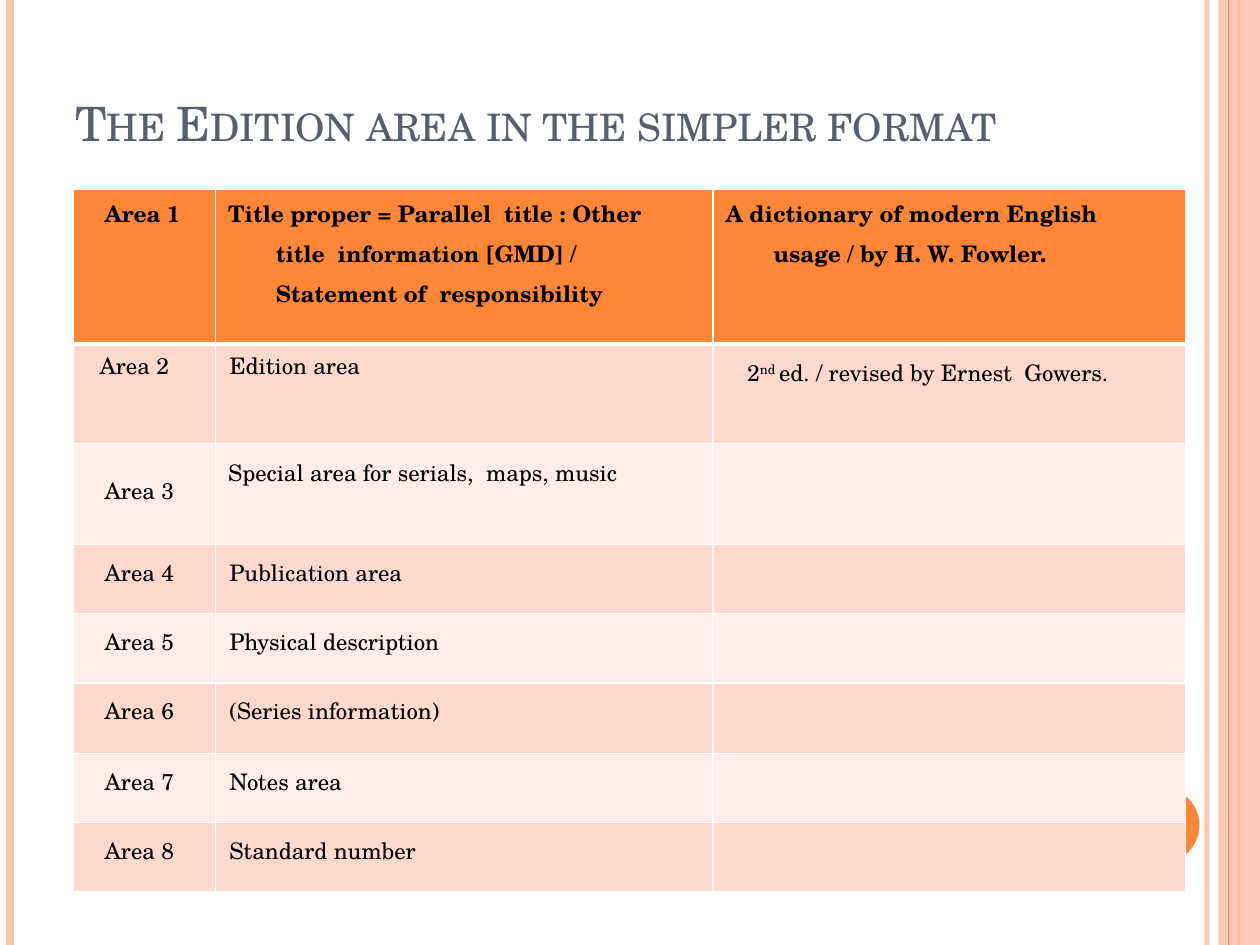
from dataclasses import dataclass

from lxml.etree import SubElement
from pptx import Presentation
from pptx.dml.color import RGBColor
from pptx.enum.shapes import MSO_CONNECTOR as Connector, MSO_SHAPE as Shape
from pptx.enum.text import MSO_ANCHOR as Anchor
from pptx.oxml.ns import qn
from pptx.util import Inches, Pt


@dataclass(frozen=True)
class Theme:
    font: str = "TeX Gyre Schola"
    title_size: float = 27
    table_size: float = 13
    title: str = "575F6D"
    text: str = "000000"
    accent: str = "FE8637"
    stripe: str = "FEC3AE"
    band_dark: str = "FFD9CE"
    band_light: str = "FFEDE8"
    border: str = "FFFFFF"


@dataclass(frozen=True)
class CellText:
    """Text with its top inset, left margin and first-line indent in inches."""
    text: str
    top: float = 0.05
    margin: float = 0.1
    indent: float = 0
    superscript: str = ""


THEME = Theme()
SLIDE_HEIGHT = 7.5
COLUMN_WIDTHS = (1.13, 3.95, 3.75)
ROW_HEIGHTS = (1.23, 0.79, 0.8, 0.55, 0.55, 0.56, 0.55, 0.55)
HANGING = {"margin": 0.47, "indent": -0.38}
AREA_MARGIN = 0.24
HEADER_RIGHT_INSET = 0.4

ROWS = [
    (CellText("Area 1", 0.01, AREA_MARGIN),
     CellText("Title proper = Parallel  title : Other title  information [GMD] /  "
              "Statement of  responsibility", 0.01, **HANGING),
     CellText("A dictionary of modern English  usage / by H. W. Fowler.", 0.01, **HANGING)),
    (CellText("Area 2", 0, 0.2),
     CellText("Edition area", 0),
     CellText("2nd ed. / revised by Ernest  Gowers.", 0.05, 0.47, -0.21, "nd ")),
    (CellText("Area 3", 0.2, AREA_MARGIN),
     CellText("Special area for serials,  maps, music", 0.06, **HANGING)),
] + [
    (CellText(f"Area {number}", margin=AREA_MARGIN), CellText(description))
    for number, description in enumerate(
        ("Publication area", "Physical description", "(Series information)",
         "Notes area", "Standard number"), start=4)
]


def color(value):
    return RGBColor.from_string(value)


def set_opacity(shape, percent):
    """Apply opacity to the fill or line colour of a shape."""
    value = next(shape._element.spPr.iter(qn("a:srgbClr")))
    SubElement(value, qn("a:alpha"), val=str(percent * 1000))


def style_font(font, size, text_color, bold=False):
    font.name = THEME.font
    font.size = Pt(size)
    font.bold = bold
    font.color.rgb = color(text_color)


def add_vertical_line(slide, x, line_color, width):
    line = slide.shapes.add_connector(
        Connector.STRAIGHT, Inches(x), 0, Inches(x), Inches(SLIDE_HEIGHT))
    line.line.color.rgb = color(line_color)
    line.line.width = Pt(width)
    SubElement(line._element.spPr, qn("a:effectLst"))
    return line


def add_plain_shape(slide, kind, left, top, width, height, fill):
    shape = slide.shapes.add_shape(
        kind, Inches(left), Inches(top), Inches(width), Inches(height))
    shape.shadow.inherit = False
    shape.fill.solid()
    shape.fill.fore_color.rgb = color(fill)
    shape.line.fill.background()
    return shape


def add_side_stripes(slide):
    set_opacity(add_vertical_line(slide, 9.58, THEME.stripe, 3), 93)
    add_vertical_line(slide, 0.08, THEME.stripe, 4.5)
    add_vertical_line(slide, 9.83, THEME.accent, 1.5)
    band = add_plain_shape(slide, Shape.RECTANGLE, 9.67, 0, 0.33, SLIDE_HEIGHT, THEME.stripe)
    set_opacity(band, 87)
    add_vertical_line(slide, 9.75, THEME.accent, 0.75)
    add_plain_shape(slide, Shape.OVAL, 8.92, 6.25, 0.6, 0.6, THEME.accent)


def add_title(slide, text):
    box = slide.shapes.add_textbox(Inches(0.5), Inches(0.17), Inches(8), Inches(1.08))
    frame = box.text_frame
    frame.word_wrap = True
    frame.vertical_anchor = Anchor.BOTTOM
    frame.text = text
    run = frame.paragraphs[0].runs[0]
    style_font(run.font, THEME.title_size, THEME.title)
    run.font._element.set("cap", "small")


def set_borders(cell, bottom_width, top_width):
    properties = cell._tc.get_or_add_tcPr()
    widths = {"lnL": 1, "lnR": 1, "lnT": top_width, "lnB": bottom_width}
    for side, width in widths.items():
        line = SubElement(properties, qn(f"a:{side}"), w=str(Pt(width)))
        fill = SubElement(line, qn("a:solidFill"))
        SubElement(fill, qn("a:srgbClr"), val=THEME.border)


def write_cell(cell, content, header):
    cell.margin_left = Inches(0.01)
    cell.margin_right = Inches(HEADER_RIGHT_INSET if header else 0.01)
    cell.margin_top = Inches(content.top)
    cell.margin_bottom = 0
    paragraph = cell.text_frame.paragraphs[0]
    paragraph.line_spacing = 1.15
    properties = paragraph._p.get_or_add_pPr()
    properties.set("marL", str(Inches(content.margin)))
    properties.set("indent", str(Inches(content.indent)))

    parts = [content.text]
    if content.superscript:
        parts = content.text.partition(content.superscript)
    for part in parts:
        run = paragraph.add_run()
        run.text = part
        style_font(run.font, THEME.table_size, THEME.text, header)
        if part == content.superscript:
            run.font._element.set("baseline", "30000")


def add_areas_table(slide):
    table = slide.shapes.add_table(
        len(ROW_HEIGHTS), len(COLUMN_WIDTHS), Inches(0.58), Inches(1.5),
        Inches(sum(COLUMN_WIDTHS)), Inches(sum(ROW_HEIGHTS))).table
    for column, width in zip(table.columns, COLUMN_WIDTHS):
        column.width = Inches(width)
    for index, (row, height) in enumerate(zip(table.rows, ROW_HEIGHTS)):
        row.height = Inches(height)
        header = index == 0
        band = THEME.band_dark if index % 2 else THEME.band_light
        for cell in row.cells:
            set_borders(cell, 3 if header else 1, 3 if index == 1 else 1)
            cell.fill.solid()
            cell.fill.fore_color.rgb = color(THEME.accent if header else band)
        for column, content in enumerate(ROWS[index]):
            write_cell(table.cell(index, column), content, header)
            if column == 0:
                table.cell(index, column).margin_right = Inches(0.01)


def main():
    presentation = Presentation()
    presentation.slide_width = Inches(10)
    presentation.slide_height = Inches(SLIDE_HEIGHT)
    slide = presentation.slides.add_slide(presentation.slide_layouts[6])
    add_side_stripes(slide)
    add_title(slide, "The Edition area in the simpler format")
    add_areas_table(slide)
    presentation.save("out.pptx")


if __name__ == "__main__":
    main()
